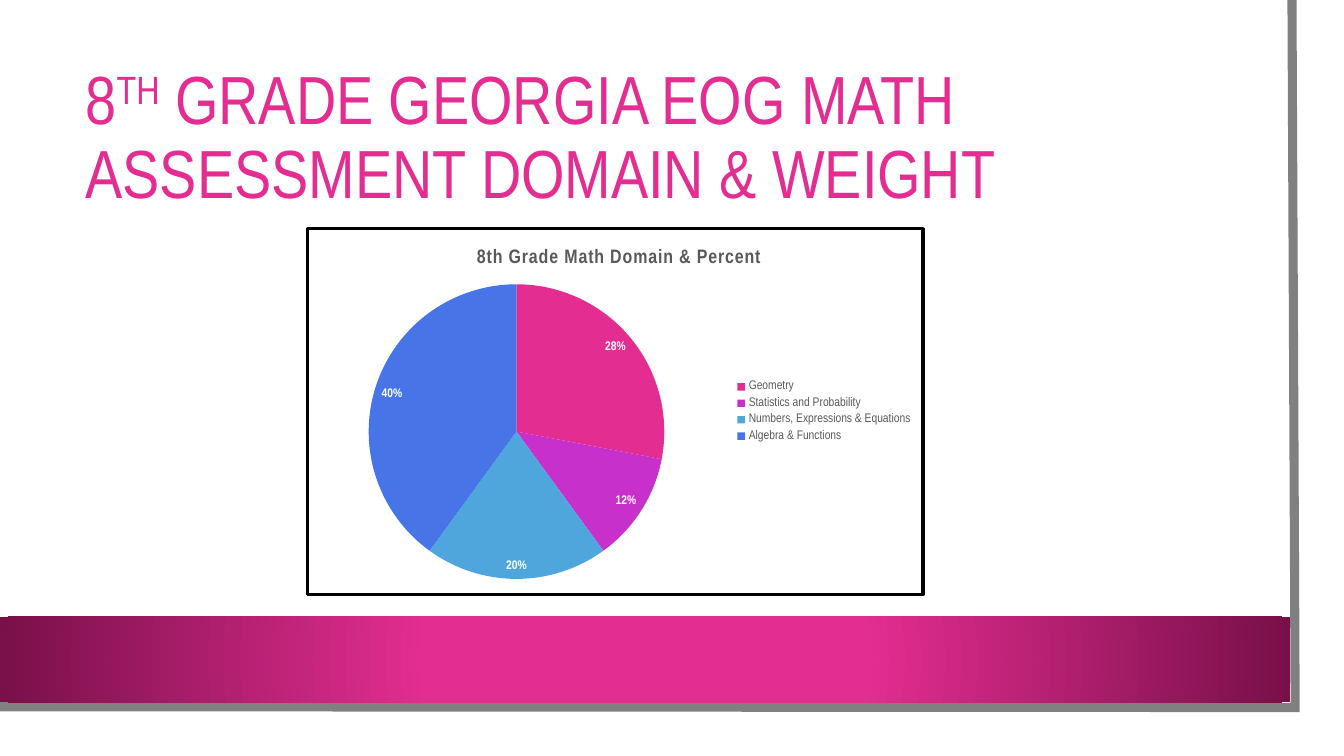
from dataclasses import dataclass

from lxml import etree
from pptx import Presentation
from pptx import util as u
from pptx.chart import data
from pptx.dml import color
from pptx.enum import chart as kinds
from pptx.enum import shapes, text
from pptx.oxml import ns

FACE = "Arial Narrow"
PINK = "E32D91"
GREY = "595959"


@dataclass
class Slice:
    name: str
    share: int
    tint: str


@dataclass
class Panel:
    top: float
    width: float
    height: float
    tint: str


SLICES = [
    Slice("Geometry", 28, PINK),
    Slice("Statistics and Probability", 12, "C830CC"),
    Slice("Numbers, Expressions & Equations", 20, "4EA6DC"),
    Slice("Algebra & Functions", 40, "4775E7"),
]
PAGE = Panel(0, 33.27, 18.47, "FFFFFF")
BAND = Panel(15.54, 32.51, 2.16, PINK)


def rgb(code: str) -> color.RGBColor:
    return color.RGBColor.from_string(code)


def node(tag: str, **attrs):
    return etree.Element(ns.qn(tag), {key: str(val) for key, val in attrs.items()})


def style(font, size: float, tint: str, bold: bool = False) -> None:
    font.name = FACE
    font.size = u.Pt(size)
    font.bold = bold
    font.color.rgb = rgb(tint)


def write(para, words: str, *, size: float, tint: str, bold: bool = False,
          raised: int = 0, space: int = 0) -> None:
    run = para.add_run()
    run.text = words
    style(run.font, size, tint, bold)
    props = run._r.get_or_add_rPr()
    if raised:
        props.set("baseline", str(raised * 1000))
    if space:
        props.set("spc", str(space))


def draw(slide, panel: Panel):
    shape = slide.shapes.add_shape(shapes.MSO_SHAPE.RECTANGLE, 0, u.Cm(panel.top),
                                   u.Cm(panel.width), u.Cm(panel.height))
    shape.shadow.inherit = False
    shape.fill.solid()
    shape.fill.fore_color.rgb = rgb(panel.tint)
    shape.line.fill.background()
    return shape


def glow(shape, stops: list[tuple[int, str]]) -> None:
    grad = node("a:gradFill", rotWithShape=1)
    steps = node("a:gsLst")
    for place, tint in stops:
        stop = node("a:gs", pos=place * 1000)
        stop.append(node("a:srgbClr", val=tint))
        steps.append(stop)
    sweep = node("a:path", path="circle")
    sweep.append(node("a:fillToRect", l=50000, t=50000, r=50000, b=50000))
    grad.extend([steps, sweep])
    props = shape._element.spPr
    props.replace(props.find(ns.qn("a:solidFill")), grad)


def edge(slide) -> None:
    build = slide.shapes.build_freeform(u.Cm(32.56), 0)
    build.add_line_segments([(u.Cm(32.64), u.Cm(17.83)), (u.Cm(-0.08), u.Cm(17.81))],
                            close=False)
    shape = build.convert_to_shape()
    shape.shadow.inherit = False
    shape.fill.background()
    shape.line.color.rgb = rgb("808080")
    shape.line.width = u.Pt(6.5)
    shape.line._ln.append(node("a:miter", lim=800000))


def head(slide) -> None:
    box = slide.shapes.add_textbox(u.Cm(1.91), u.Cm(1.91), u.Cm(28.88), u.Cm(3.2))
    frame = box.text_frame
    frame.word_wrap = True
    frame.vertical_anchor = text.MSO_ANCHOR.MIDDLE
    para = frame.paragraphs[0]
    para.line_spacing = 0.9
    for words, lift in (("8", 0), ("TH", 30),
                        (" GRADE GEORGIA EOG MATH ASSESSMENT DOMAIN & WEIGHT", 0)):
        write(para, words, size=48.6, tint=PINK, raised=lift)


def place(part, index: int, **spots: float) -> None:
    for old in part.findall(ns.qn("c:layout")):
        part.remove(old)
    layout = node("c:layout")
    manual = node("c:manualLayout")
    if "w" in spots:
        manual.append(node("c:layoutTarget", val="inner"))
    manual.extend([node("c:xMode", val="edge"), node("c:yMode", val="edge")])
    manual.extend([node(f"c:{key}", val=val) for key, val in spots.items()])
    layout.append(manual)
    part.insert(index, layout)


def frame(chart) -> None:
    props = node("c:spPr")
    fill = node("a:solidFill")
    fill.append(node("a:srgbClr", val="FFFFFF"))
    line = node("a:ln", w=u.Pt(2.25))
    ink = node("a:solidFill")
    ink.append(node("a:srgbClr", val="000000"))
    line.extend([ink, node("a:round")])
    props.extend([fill, line])
    chart._chartSpace.find(ns.qn("c:txPr")).addprevious(props)


def pie(slide) -> None:
    table = data.CategoryChartData()
    table.categories = [item.name for item in SLICES]
    table.add_series("Series 1", [item.share for item in SLICES])
    chart = slide.shapes.add_chart(kinds.XL_CHART_TYPE.PIE, u.Cm(7.7), u.Cm(5.72),
                                   u.Cm(15.6), u.Cm(9.3), table).chart
    style(chart.font, 10, "000000")
    frame(chart)

    chart.has_title = True
    title = chart.chart_title
    write(title.text_frame.paragraphs[0], "8th Grade Math Domain & Percent",
          size=14, tint=GREY, bold=True, space=50)
    title.include_in_layout = False
    place(title._element, 1, x=0.27, y=0.04)

    chart.has_legend = True
    chart.legend.position = kinds.XL_LEGEND_POSITION.RIGHT
    chart.legend.include_in_layout = False
    style(chart.legend.font, 9, GREY)

    plot = chart.plots[0]
    plot.vary_by_categories = True
    place(chart._chartSpace.chart.plotArea, 0, x=0.1, y=0.15, w=0.48, h=0.81)
    for index, item in enumerate(SLICES):
        point = plot.series[0].points[index].format
        point.fill.solid()
        point.fill.fore_color.rgb = rgb(item.tint)
        point.line.fill.background()
    plot.has_data_labels = True
    labels = plot.data_labels
    labels.show_value = False
    labels.show_percentage = True
    labels.number_format = "0%"
    labels.number_format_is_linked = False
    labels.position = kinds.XL_LABEL_POSITION.INSIDE_END
    style(labels.font, 9, "FFFFFF", True)


def main() -> None:
    deck = Presentation()
    deck.slide_width = u.Cm(33.87)
    deck.slide_height = u.Cm(19.05)
    slide = deck.slides.add_slide(deck.slide_layouts[6])
    draw(slide, PAGE)
    edge(slide)
    glow(draw(slide, BAND), [(34, PINK), (100, "781049")])
    head(slide)
    pie(slide)
    deck.save("out.pptx")


if __name__ == "__main__":
    main()
